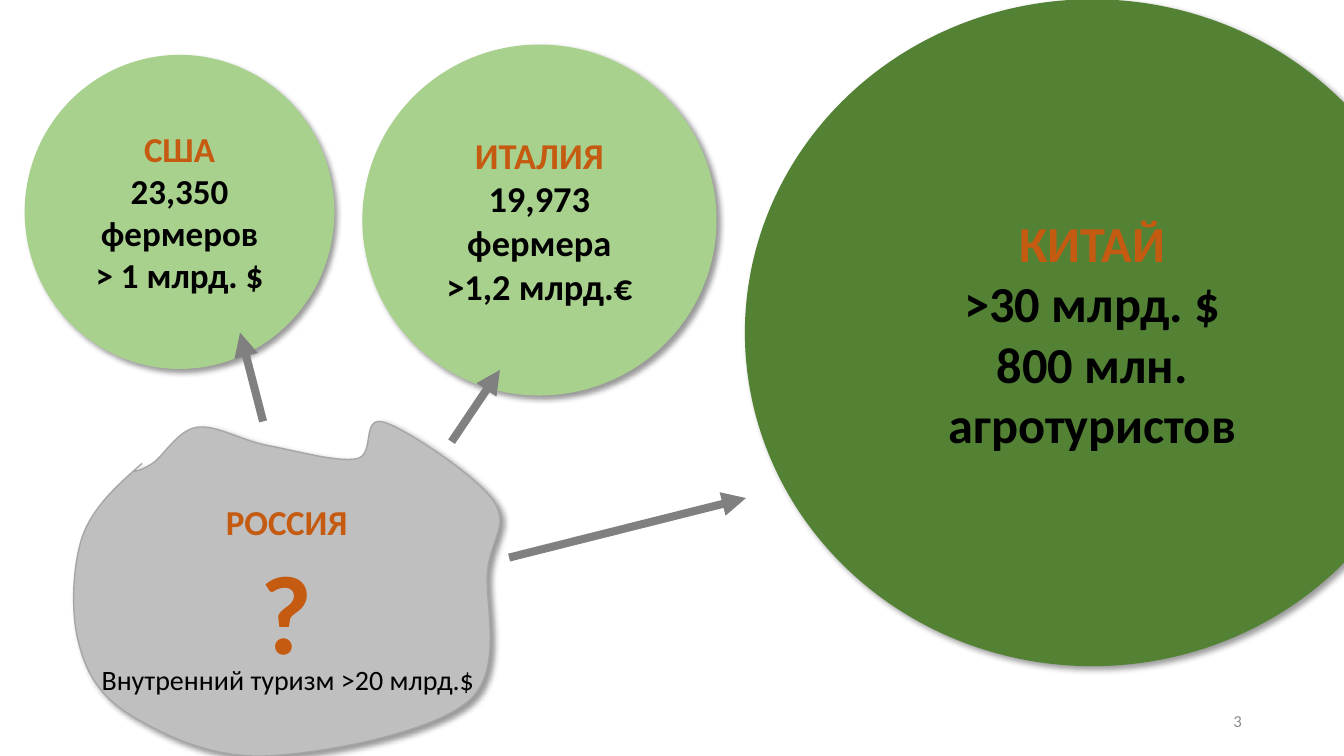
from lxml.etree import SubElement as Sub
from pptx import Presentation
from pptx.dml.color import RGBColor as Rgb
from pptx.enum.shapes import MSO_CONNECTOR as Link, MSO_SHAPE as Shape
from pptx.enum.text import MSO_ANCHOR as Anchor, PP_ALIGN as Align
from pptx.oxml.ns import qn
from pptx.util import Cm, Pt

HUE = {
    "light": "A9D18E", "deep": "548235", "gray": "BFBFBF", "edge": "A6A6A6",
    "arrow": "808080", "title": "C55A11", "text": "000000", "page": "8C8C8C",
}
FONT = "Calibri"

CIRCLES = [
    ((0.64, 1.4, 7.77, 7.88), "light", 25,
     ["США", "23,350 фермеров", "> 1 млрд. $"]),
    ((9.15, 1.14, 8.89, 8.81), "light", 26,
     ["ИТАЛИЯ", "19,973 фермера", ">1,2 млрд.€"]),
    ((18.79, 0, 17.48, 16.77), "deep", 36,
     ["КИТАЙ", ">30 млрд. $", "800 млн. агротуристов"]),
]
RUSSIA = [("РОССИЯ", 25, "title"), ("?", 80, "title")]
LAND = (1.85, 10.62, 10.75, 8.43)
START = (3.58, 11.68)
CURVES = [
    ((2.97, 12.22), (2.36, 12.75), (2.08, 13.51)),
    ((1.83, 14.25), (1.78, 15.42), (1.98, 16.18)),
    ((2.16, 16.92), (2.49, 17.53), (3.28, 18.01)),
    ((4.06, 18.49), (5.28, 19.1), (6.68, 19.05)),
    ((8.1, 19), (10.85, 18.47), (11.79, 17.68)),
    ((12.73, 16.89), (12.19, 15.19), (12.29, 14.35)),
    ((12.4, 13.51), (12.85, 13.21), (12.42, 12.6)),
    ((11.96, 11.96), (10.24, 10.82), (9.68, 10.64)),
    ((9.09, 10.46), (9.47, 11.46), (8.99, 11.56)),
    ((8.51, 11.66), (7.42, 11.35), (6.76, 11.23)),
    ((6.07, 11.1), (5.44, 10.69), (4.95, 10.77)),
    ((4.47, 10.85), (4.11, 11.51), (3.84, 11.68)),
    ((3.56, 11.86), (3.45, 11.86), (3.33, 11.89)),
]
ARROWS = [
    (12.83, 14.05, 18.8, 12.55),
    (11.38, 11.13, 12.6, 9.32),
    (6.63, 10.62, 6.05, 8.38),
]
LABELS = [
    ((2.31, 16.56, 11.43, 1.12), "Внутренний туризм >20 млрд.$", 20, "text",
     Align.LEFT, Anchor.TOP),
    ((23.93, 17.65, 7.62, 1.02), "3", 12, "page", Align.RIGHT, Anchor.MIDDLE),
]


def color(name):
    return Rgb.from_string(HUE[name])


def write(shape, lines, align, anchor, bold):
    frame = shape.text_frame
    frame.word_wrap = True
    frame.vertical_anchor = anchor
    for i, (text, size, hue) in enumerate(lines):
        para = frame.add_paragraph() if i else frame.paragraphs[0]
        para.text = text
        para.alignment = align
        font = para.font
        font.name, font.size, font.bold = FONT, Pt(size), bold
        font.color.rgb = color(hue)


def paint(shape, fill, edge):
    shape.fill.solid()
    shape.fill.fore_color.rgb = color(fill)
    shape.line.color.rgb = color(edge)
    shape.line.width = Pt(1)
    shape.shadow.inherit = False
    group = shape.element.spPr.find(qn("a:effectLst"))
    cast = Sub(group, qn("a:outerShdw"), blurRad=str(Pt(4)), dist=str(Pt(3)),
               dir=str(45 * 60000), algn="tl", rotWithShape="0")
    tint = Sub(cast, qn("a:srgbClr"), val="000000")
    Sub(tint, qn("a:alpha"), val="40000")


def outline(shapes):
    left, top, width, height = LAND
    pen = shapes.build_freeform(Cm(left), Cm(top))
    pen.add_line_segments([(Cm(left + width), Cm(top + height))], close=False)
    land = pen.convert_to_shape()
    route = next(land.element.iter(qn("a:path")))
    for part in list(route):
        route.remove(part)
    steps = [("a:moveTo", [START])]
    steps += [("a:cubicBezTo", curve) for curve in CURVES]
    for tag, points in steps:
        step = Sub(route, qn(tag))
        for x, y in points:
            Sub(step, qn("a:pt"), x=str(Cm(x - left)), y=str(Cm(y - top)))
    return land


def main():
    deck = Presentation()
    deck.slide_width, deck.slide_height = Cm(33.87), Cm(19.05)
    slide = deck.slides.add_slide(deck.slide_layouts[6])
    shapes = slide.shapes

    for box, fill, size, texts in CIRCLES:
        disc = shapes.add_shape(Shape.OVAL, *map(Cm, box))
        paint(disc, fill, fill)
        lines = [(text, size, "text" if i else "title")
                 for i, text in enumerate(texts)]
        write(disc, lines, Align.CENTER, Anchor.MIDDLE, True)

    land = outline(shapes)
    paint(land, "gray", "edge")
    write(land, RUSSIA, Align.CENTER, Anchor.MIDDLE, True)

    for ends in ARROWS:
        arrow = shapes.add_connector(Link.STRAIGHT, *map(Cm, ends))
        arrow.line.color.rgb = color("arrow")
        arrow.line.width = Pt(5.75)
        Sub(arrow.element.spPr.find(qn("a:ln")), qn("a:tailEnd"),
            type="triangle")
        Sub(arrow.element.spPr, qn("a:effectLst"))

    for box, text, size, hue, align, anchor in LABELS:
        label = shapes.add_textbox(*map(Cm, box))
        write(label, [(text, size, hue)], align, anchor, False)

    deck.save("out.pptx")


if __name__ == "__main__":
    main()
